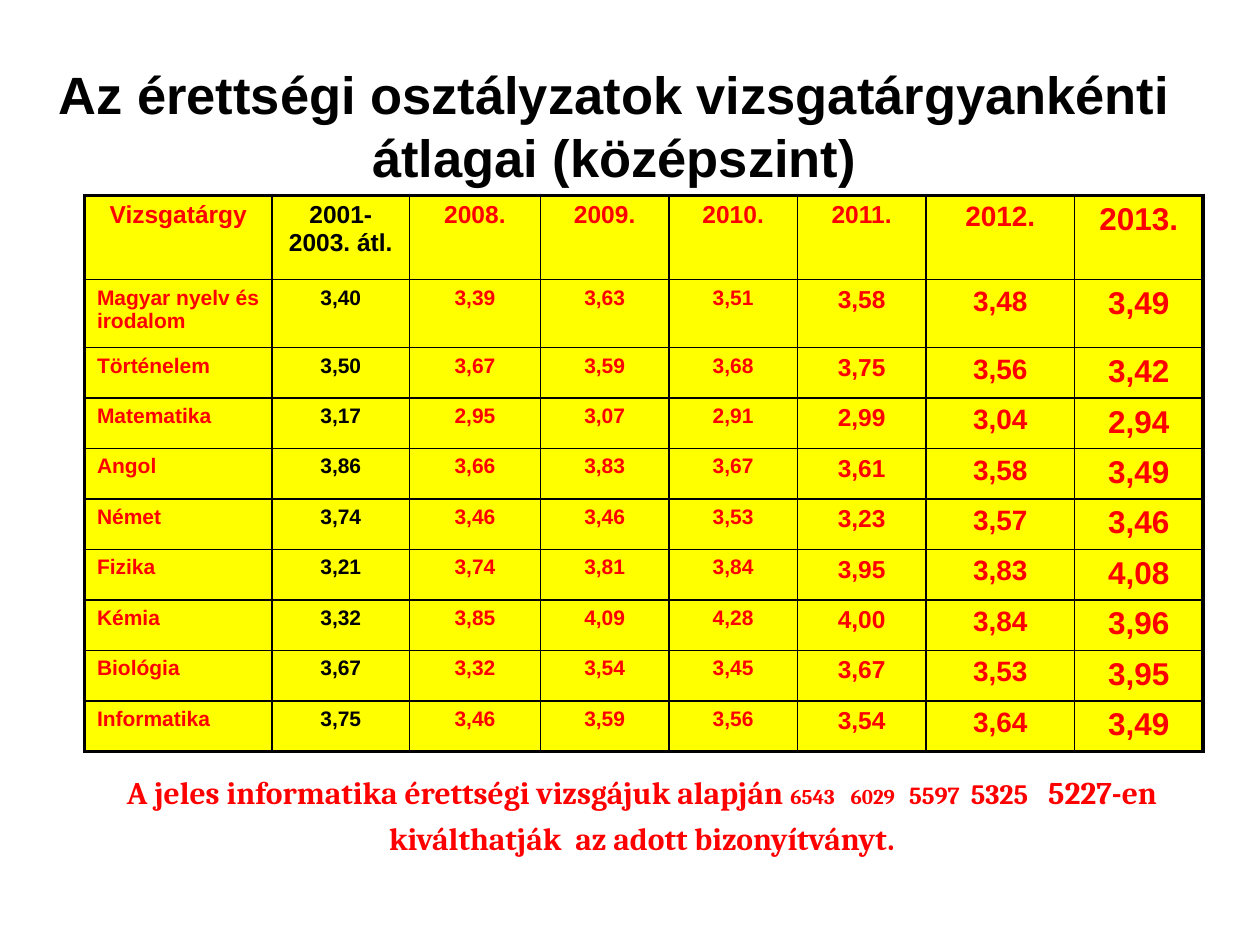
from lxml import etree
from pptx import Presentation
from pptx.dml.color import RGBColor
from pptx.enum import text
from pptx.oxml.ns import qn
from pptx.util import Inches, Pt

COLORS = {"black": "000000", "red": "FF0000", "yellow": "FFFF00"}

TITLE = "Az érettségi osztályzatok vizsgatárgyankénti átlagai (középszint)"
GRADES = [
    ["Vizsgatárgy", "2001-2003. átl.", "2008.", "2009.", "2010.", "2011.", "2012.", "2013."],
    ["Magyar nyelv és irodalom", "3,40", "3,39", "3,63", "3,51", "3,58", "3,48", "3,49"],
    ["Történelem", "3,50", "3,67", "3,59", "3,68", "3,75", "3,56", "3,42"],
    ["Matematika", "3,17", "2,95", "3,07", "2,91", "2,99", "3,04", "2,94"],
    ["Angol", "3,86", "3,66", "3,83", "3,67", "3,61", "3,58", "3,49"],
    ["Német", "3,74", "3,46", "3,46", "3,53", "3,23", "3,57", "3,46"],
    ["Fizika", "3,21", "3,74", "3,81", "3,84", "3,95", "3,83", "4,08"],
    ["Kémia", "3,32", "3,85", "4,09", "4,28", "4,00", "3,84", "3,96"],
    ["Biológia", "3,67", "3,32", "3,54", "3,45", "3,67", "3,53", "3,95"],
    ["Informatika", "3,75", "3,46", "3,59", "3,56", "3,54", "3,64", "3,49"],
]
COLUMN_WIDTHS = [1.49, 1.09, 1.04, 1.02, 1.02, 1.02, 1.18, 1.02]
ROW_HEIGHTS = [0.67, 0.54] + [0.4] * 8
HEADER_SIZES = [14] * 6 + [16, 18]
BODY_SIZES = [12] * 5 + [14, 16, 18]

# Each footnote span: wording, size, extra letter spacing in points
FOOTNOTE = [
    [("A jeles informatika érettségi vizsgájuk alapján ", 18, 0),
     ("6543", 12, 0), (" ", 12, 6.3), ("6029", 12, 0), (" ", 12, 5.4),
     ("5597", 14, 0), (" ", 14, 3.2), ("5325", 16, 0), (" ", 18, 7.4),
     ("5227-en", 18, 0)],
    [("kiválthatják", 18, 0), (" ", 18, 4), ("az adott bizonyítványt.", 18, 0)],
]


def style(font, size, color, name="Arial"):
    font.name, font.size, font.bold = name, Pt(size), True
    font.color.rgb = RGBColor.from_string(COLORS[color])


def add_box(page, left, top, width, height):
    box = page.shapes.add_textbox(*map(Inches, (left, top, width, height)))
    box.text_frame.word_wrap = True
    return box.text_frame


def set_borders(cell, widths):
    properties = cell._tc.get_or_add_tcPr()
    for index, (side, width) in enumerate(widths.items()):
        line = etree.Element(qn(f"a:ln{side}"), w=str(Pt(width)))
        fill = etree.SubElement(line, qn("a:solidFill"))
        etree.SubElement(fill, qn("a:srgbClr"), val=COLORS["black"])
        properties.insert(index, line)


def add_title(page):
    frame = add_box(page, 0.27, 0.52, 9.21, 0.95)
    frame.vertical_anchor = text.MSO_ANCHOR.MIDDLE
    frame.text = TITLE
    para = frame.paragraphs[0]
    para.alignment = text.PP_ALIGN.CENTER
    style(para.runs[0].font, 30, "black")


def add_grades(page):
    last_row, last_column = len(GRADES) - 1, len(COLUMN_WIDTHS) - 1
    table = page.shapes.add_table(
        len(GRADES), len(COLUMN_WIDTHS), Inches(0.67), Inches(1.55),
        Inches(sum(COLUMN_WIDTHS)), Inches(sum(ROW_HEIGHTS))).table
    table.first_row = table.horz_banding = False
    for column, width in zip(table.columns, COLUMN_WIDTHS):
        column.width = Inches(width)
    for r, (values, height) in enumerate(zip(GRADES, ROW_HEIGHTS)):
        table.rows[r].height = Inches(height)
        sizes = BODY_SIZES if r else HEADER_SIZES
        for c, (value, size) in enumerate(zip(values, sizes)):
            cell = table.cell(r, c)
            cell.fill.solid()
            cell.fill.fore_color.rgb = RGBColor.from_string(COLORS["yellow"])
            cell.text = value
            para = cell.text_frame.paragraphs[0]
            is_subject = r > 0 and c == 0
            para.alignment = text.PP_ALIGN.LEFT if is_subject else text.PP_ALIGN.CENTER
            style(para.runs[0].font, size, "black" if c == 1 else "red")
            outer = {"L": c == 0, "R": c == last_column, "T": r == 0, "B": r == last_row}
            set_borders(cell, {side: 2.25 if edge else 1 for side, edge in outer.items()})


def add_footnote(page):
    frame = add_box(page, 0.88, 6.14, 8.43, 0.74)
    for index, spans in enumerate(FOOTNOTE):
        para = frame.add_paragraph() if index else frame.paragraphs[0]
        para.alignment = text.PP_ALIGN.CENTER
        para.line_spacing = 0.8
        if index:
            para.space_before = Pt(9)
        for wording, size, spacing in spans:
            span = para.add_run()
            span.text = wording
            style(span.font, size, "red", "Cambria")
            if spacing:
                span._r.get_or_add_rPr().set("spc", str(round(spacing * 100)))


def main():
    deck = Presentation()
    deck.slide_width, deck.slide_height = Inches(10), Inches(7.5)
    page = deck.slides.add_slide(deck.slide_layouts[6])
    add_title(page)
    add_grades(page)
    add_footnote(page)
    deck.save("out.pptx")


if __name__ == "__main__":
    main()
